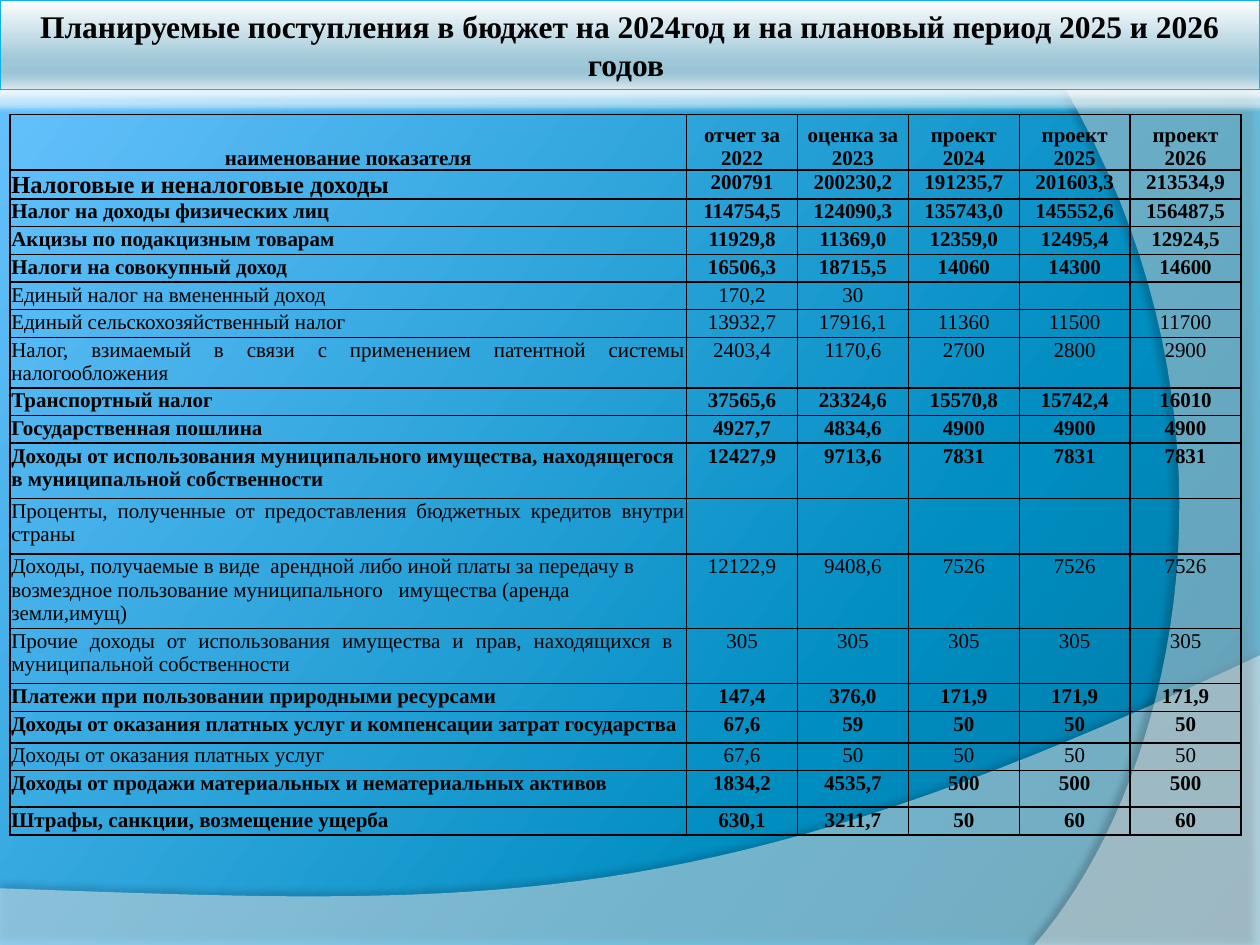
import lxml.etree
import pptx
import pptx.dml.color
import pptx.enum.dml
import pptx.enum.shapes
import pptx.enum.text
import pptx.oxml.ns
import pptx.util

Inches = pptx.util.Inches
Pt = pptx.util.Pt
RGBColor = pptx.dml.color.RGBColor
Align = pptx.enum.text.PP_ALIGN
qn = pptx.oxml.ns.qn

BLACK = RGBColor(0x00, 0x00, 0x00)
WHITE = RGBColor(0xFF, 0xFF, 0xFF)
BANNER_LINE = RGBColor(0x0A, 0xB3, 0xEC)
BACKGROUND_STOPS = [
    (0, RGBColor(0x00, 0x76, 0xA1)),
    (30, RGBColor(0x00, 0x8D, 0xC0)),
    (100, RGBColor(0x6A, 0xC3, 0xFF)),
]
BANNER_STOPS = [
    (0, RGBColor(0xFE, 0xFE, 0xFF)),
    (68, RGBColor(0x9E, 0xC7, 0xD7)),
    (81, RGBColor(0x9B, 0xC5, 0xD6)),
    (86, RGBColor(0xA5, 0xCA, 0xD9)),
    (100, RGBColor(0xDA, 0xE8, 0xEE)),
]
FONT = "Times New Roman"
TITLE = "Планируемые поступления в бюджет на 2024год и на плановый период 2025 и 2026 годов "
HEADER = ["наименование показателя", "отчет за 2022", "оценка за 2023",
          "проект 2024", "проект 2025", "проект 2026"]
J, L = Align.JUSTIFY, Align.LEFT
ROWS = [
    (0.23, True, L, "Налоговые и неналоговые доходы", "200791 200230,2 191235,7 201603,3 213534,9"),
    (0.22, True, J, "Налог на доходы физических лиц", "114754,5 124090,3 135743,0 145552,6 156487,5"),
    (0.22, True, J, "Акцизы по подакцизным товарам", "11929,8 11369,0 12359,0 12495,4 12924,5"),
    (0.22, True, J, "Налоги на совокупный доход", "16506,3 18715,5 14060 14300 14600"),
    (0.22, False, J, "Единый налог на вмененный доход", "170,2 30"),
    (0.22, False, J, "Единый сельскохозяйственный налог", "13932,7 17916,1 11360 11500 11700"),
    (0.4, False, J, "Налог, взимаемый в связи с применением патентной системы налогообложения",
     "2403,4 1170,6 2700 2800 2900"),
    (0.22, True, J, "Транспортный налог", "37565,6 23324,6 15570,8 15742,4 16010"),
    (0.22, True, J, "Государственная пошлина", "4927,7 4834,6 4900 4900 4900"),
    (0.44, True, L, "Доходы от использования муниципального имущества, находящегося "
     "в муниципальной собственности", "12427,9 9713,6 7831 7831 7831"),
    (0.44, False, J, "Проценты, полученные от предоставления бюджетных кредитов внутри страны", ""),
    (0.59, False, L, "Доходы, получаемые в виде  арендной либо иной платы за передачу в возмездное "
     "пользование муниципального   имущества (аренда земли,имущ)", "12122,9 9408,6 7526 7526 7526"),
    (0.44, False, J, "Прочие доходы от использования имущества и прав, находящихся в  "
     "муниципальной собственности", "305 305 305 305 305"),
    (0.22, True, J, "Платежи при пользовании природными ресурсами", "147,4 376,0 171,9 171,9 171,9"),
    (0.25, True, J, "Доходы от оказания платных услуг и компенсации затрат государства", "67,6 59 50 50 50"),
    (0.22, False, J, "Доходы от оказания платных услуг", "67,6 50 50 50 50"),
    (0.29, True, L, "Доходы от продажи материальных и нематериальных активов", "1834,2 4535,7 500 500 500"),
    (0.22, True, J, "Штрафы, санкции, возмещение ущерба", "630,1 3211,7 50 60 60"),
]


def add_element(parent, tag, **attributes):
    element = lxml.etree.SubElement(parent, qn(tag))
    for name, value in attributes.items():
        element.set(name, str(value))
    return element


def add_color(parent, color, opacity=100):
    element = add_element(parent, "a:srgbClr", val=color)
    if opacity < 100:
        add_element(element, "a:alpha", val=opacity * 1000)


def apply_gradient(fill, owner, stops, angle):
    fill.gradient()
    fill.gradient_angle = 360 - angle
    stop_list = next(owner.iter(qn("a:gsLst")))
    for stop in list(stop_list):
        stop_list.remove(stop)
    for position, color in stops:
        add_color(add_element(stop_list, "a:gs", pos=position * 1000), color)


def add_effect(shape, tag, color, opacity, **attributes):
    shape.shadow.inherit = False
    effects = next(shape.element.iter(qn("a:effectLst")))
    add_color(add_element(effects, tag, **attributes), color, opacity)


def curve_points(start, first, second, end, steps=40):
    points = []
    for step in range(1, steps + 1):
        t = step / steps
        weights = ((1 - t) ** 3, 3 * t * (1 - t) ** 2, 3 * t * t * (1 - t), t ** 3)
        points.append(tuple(
            sum(weight * point[axis] for weight, point in zip(weights, (start, first, second, end)))
            for axis in (0, 1)))
    return points


def add_wave(slide, left, top, outline, opacity, shadow_opacity, distance, direction):
    points = [(Inches(left + x), Inches(top + y)) for x, y in outline]
    builder = slide.shapes.build_freeform(*points[0], scale=1.0)
    builder.add_line_segments(points[1:], close=True)
    wave = builder.convert_to_shape()
    wave.fill.solid()
    wave.fill.fore_color.rgb = WHITE
    add_element(next(wave.element.iter(qn("a:srgbClr"))), "a:alpha", val=opacity * 1000)
    wave.line.fill.background()
    add_effect(wave, "a:outerShdw", BLACK, shadow_opacity, blurRad=Pt(4), dist=Pt(distance),
               dir=direction * 60000, algn="ctr", rotWithShape=0)


def add_background(slide):
    apply_gradient(slide.background.fill, slide.element, BACKGROUND_STOPS, 217)
    bottom_curve = curve_points((10, 0), (5.59, 2.09), (3.91, 1.99), (0, 1.85))
    add_wave(slide, 0, 5.2, [(0, 2.31), (10, 2.31), (10, 0)] + bottom_curve, 45, 35, 3.5, 270)
    side_curve = curve_points((0.21, 7.5), (1.35, 6.19), (2.18, 3), (0, 0))
    add_wave(slide, 8, 0, [(2, 0.02), (2, 7.5), (0.21, 7.5)] + side_curve, 40, 45, 4, 180)


def format_paragraph(paragraph, size, bold, alignment):
    paragraph.alignment = alignment
    for run in paragraph.runs:
        run.font.name = FONT
        run.font.size = Pt(size)
        run.font.bold = bold
        run.font.color.rgb = BLACK


def add_banner(slide, left, top, width, height):
    banner = slide.shapes.add_shape(
        pptx.enum.shapes.MSO_SHAPE.RECTANGLE, left, top, width, height)
    apply_gradient(banner.fill, banner.element, BANNER_STOPS, 90)
    banner.line.color.rgb = BANNER_LINE
    banner.line.width = Pt(0.75)
    add_effect(banner, "a:glow", WHITE, 60, rad=Pt(6))
    text_frame = banner.text_frame
    text_frame.word_wrap = True
    text_frame.vertical_anchor = pptx.enum.text.MSO_ANCHOR.MIDDLE
    text_frame.text = TITLE
    format_paragraph(text_frame.paragraphs[0], 18, True, Align.CENTER)


def fill_cell(cell, text, size, bold, alignment):
    cell.margin_left = cell.margin_right = cell.margin_top = Inches(0.01)
    cell.margin_bottom = 0
    cell.text_frame.text = text
    paragraph = cell.text_frame.paragraphs[0]
    format_paragraph(paragraph, size, bold, alignment)
    if not text:
        add_element(paragraph._p, "a:endParaRPr", sz=size * 100)
    properties = cell._tc.get_or_add_tcPr()
    for side in ("a:lnL", "a:lnR", "a:lnT", "a:lnB"):
        border = add_element(properties, side, w=Pt(1))
        add_color(add_element(border, "a:solidFill"), BLACK)
    cell.fill.background()


def add_budget_table(slide, left, top, width, height):
    table = slide.shapes.add_table(len(ROWS) + 1, len(HEADER), left, top, width, height).table
    table.first_row = table.horz_banding = False
    value_width = Inches(0.88)
    for column in table.columns:
        column.width = value_width
    table.columns[0].width = width - value_width * (len(HEADER) - 1)

    table.rows[0].height = Inches(0.44)
    for index, text in enumerate(HEADER):
        cell = table.cell(0, index)
        fill_cell(cell, text, 12, True, Align.CENTER)
        cell.vertical_anchor = pptx.enum.text.MSO_ANCHOR.BOTTOM

    for row, (row_height, bold, alignment, label, values) in enumerate(ROWS, 1):
        table.rows[row].height = Inches(row_height)
        fill_cell(table.cell(row, 0), label, 14 if row == 1 else 12, bold, alignment)
        numbers = values.split()
        numbers += [""] * (len(HEADER) - 1 - len(numbers))
        for column, number in enumerate(numbers, 1):
            fill_cell(table.cell(row, column), number, 12, bold, Align.CENTER)


def main():
    presentation = pptx.Presentation()
    presentation.slide_width = Inches(10)
    presentation.slide_height = Inches(7.5)
    slide = presentation.slides.add_slide(presentation.slide_layouts[6])
    add_background(slide)
    add_banner(slide, 0, 0, Inches(10), Inches(0.71))
    add_budget_table(slide, Inches(0.08), Inches(0.91), Inches(9.77), Inches(5.81))
    presentation.save("out.pptx")


if __name__ == "__main__":
    main()
